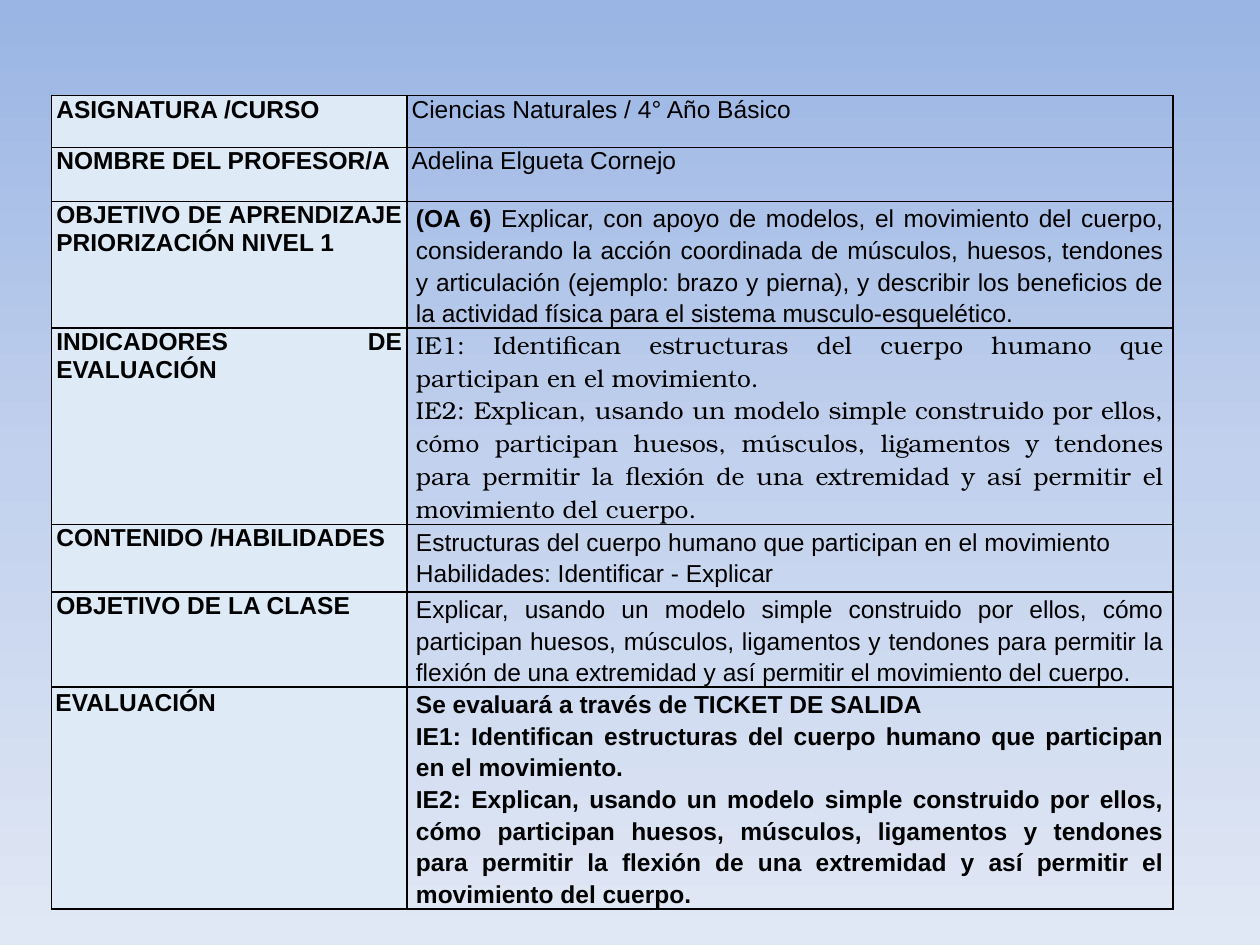
from copy import deepcopy
from dataclasses import dataclass

from lxml.etree import SubElement
from pptx import Presentation
from pptx.dml.color import RGBColor
from pptx.enum.text import PP_ALIGN
from pptx.oxml.ns import qn
from pptx.slide import Slide
from pptx.table import _Cell
from pptx.util import Pt

BLACK = RGBColor(0x00, 0x00, 0x00)
LABEL_FILL = RGBColor(0xDE, 0xEA, 0xF6)
SKY = (RGBColor(0x9A, 0xB5, 0xE4), RGBColor(0xC2, 0xD1, 0xED), RGBColor(0xE1, 0xE8, 0xF5))

SANS = "Arial"
SERIF = "TeX Gyre Bonum"
TEXT_SIZE = Pt(14)
BORDER_WIDTH = Pt(1)
COLUMN_WIDTHS = (203, 437.8)
TABLE_LEFT, TABLE_TOP = 29.5, 54.7


@dataclass(frozen=True)
class Run:
    text: str
    bold: bool = False
    font: str = SANS


@dataclass(frozen=True)
class Row:
    label: str
    height: float
    content: tuple[tuple[Run, ...], ...]
    side_margin: float = 5.2
    line_spacing: float = 1.15
    label_margins: tuple[float, float] = (2.7, 0)


MODEL_TASK = (
    "xplican, usando un modelo simple construido por ellos, cómo participan huesos, "
    "músculos, ligamentos y tendones para permitir la flexión de una extremidad y así "
    "permitir el movimiento del cuerpo."
)
FIRST_INDICATOR = (
    "IE1: Identifican estructuras del cuerpo humano que participan en el movimiento."
)
SECOND_INDICATOR = "IE2: E" + MODEL_TASK
CLASS_GOAL = "E" + MODEL_TASK.replace("xplican", "xplicar", 1)
LEARNING_GOAL = (
    "Explicar, con apoyo de modelos, el movimiento del cuerpo, considerando la acción "
    "coordinada de músculos, huesos, tendones y articulación (ejemplo: brazo y pierna), "
    "y describir los beneficios de la actividad física para el sistema musculo-esquelético."
)

ROWS = (
    Row("ASIGNATURA /CURSO", 29.7, ((Run("Ciencias Naturales / 4° Año Básico"),),), 2.7, 1),
    Row("NOMBRE DEL PROFESOR/A", 30.8, ((Run("Adelina Elgueta Cornejo"),),), 2.7, 1),
    Row("OBJETIVO DE APRENDIZAJE PRIORIZACIÓN NIVEL 1", 72,
        ((Run("(OA 6) ", bold=True), Run(LEARNING_GOAL)),)),
    Row("INDICADORES DE EVALUACIÓN", 112,
        ((Run(FIRST_INDICATOR, font=SERIF),), (Run(SECOND_INDICATOR, font=SERIF),)),
        line_spacing=1),
    Row("CONTENIDO /HABILIDADES", 38.6,
        ((Run("Estructuras del cuerpo humano que participan en el movimiento"),),
         (Run("Habilidades: Identificar - Explicar"),))),
    Row("OBJETIVO DE LA CLASE", 54, ((Run(CLASS_GOAL),),)),
    Row("EVALUACIÓN", 126.5,
        ((Run("Se evaluará a través de TICKET DE SALIDA", bold=True),),
         (Run(FIRST_INDICATOR, bold=True),),
         (Run(SECOND_INDICATOR, bold=True),)),
        label_margins=(2.2, 1.4)),
)


def paint_background(slide: Slide) -> None:
    """Vertical gradient with three evenly spaced stops."""
    fill = slide.background.fill
    fill.gradient()
    fill.gradient_angle = 270
    stop_list = slide.element.xpath("./p:cSld/p:bg//a:gsLst")[0]
    stop_list.insert(1, deepcopy(stop_list[0]))
    for index, (stop, color) in enumerate(zip(fill.gradient_stops, SKY)):
        stop.color.rgb = color
        stop.position = index / 2


def add_borders(cell: _Cell) -> None:
    properties = cell._tc.get_or_add_tcPr()
    for index, side in enumerate(("lnL", "lnR", "lnT", "lnB")):
        line = SubElement(properties, qn(f"a:{side}"), w=str(BORDER_WIDTH))
        solid = SubElement(line, qn("a:solidFill"))
        SubElement(solid, qn("a:srgbClr"), val=str(BLACK))
        properties.insert(index, line)


def fill_cell(cell: _Cell, paragraphs: tuple[tuple[Run, ...], ...],
              margins: tuple[float, float], line_spacing: float = 1) -> None:
    side, edge = margins
    cell.margin_left = cell.margin_right = Pt(side)
    cell.margin_top = cell.margin_bottom = Pt(edge)
    frame = cell.text_frame
    for index, runs in enumerate(paragraphs):
        para = frame.add_paragraph() if index else frame.paragraphs[0]
        para.alignment = PP_ALIGN.JUSTIFY
        para.line_spacing = float(line_spacing)
        for run in runs:
            span = para.add_run()
            span.text = run.text
            span.font.name = run.font
            span.font.size = TEXT_SIZE
            span.font.bold = run.bold
            span.font.color.rgb = BLACK
    add_borders(cell)


def add_plan_table(slide: Slide) -> None:
    frame = slide.shapes.add_table(
        len(ROWS), len(COLUMN_WIDTHS), Pt(TABLE_LEFT), Pt(TABLE_TOP),
        Pt(sum(COLUMN_WIDTHS)), Pt(sum(row.height for row in ROWS)))
    table = frame.table
    table.first_row = table.horz_banding = False
    for column, width in zip(table.columns, COLUMN_WIDTHS):
        column.width = Pt(width)
    for index, row in enumerate(ROWS):
        table.rows[index].height = Pt(row.height)
        label, content = table.cell(index, 0), table.cell(index, 1)
        label.fill.solid()
        label.fill.fore_color.rgb = LABEL_FILL
        content.fill.background()
        fill_cell(label, ((Run(row.label, bold=True),),), row.label_margins)
        fill_cell(content, row.content, (row.side_margin, 0), row.line_spacing)


def main() -> None:
    deck = Presentation()
    deck.slide_width, deck.slide_height = Pt(720), Pt(540)
    page = deck.slides.add_slide(deck.slide_layouts[6])
    paint_background(page)
    add_plan_table(page)
    deck.save("out.pptx")


if __name__ == "__main__":
    main()
